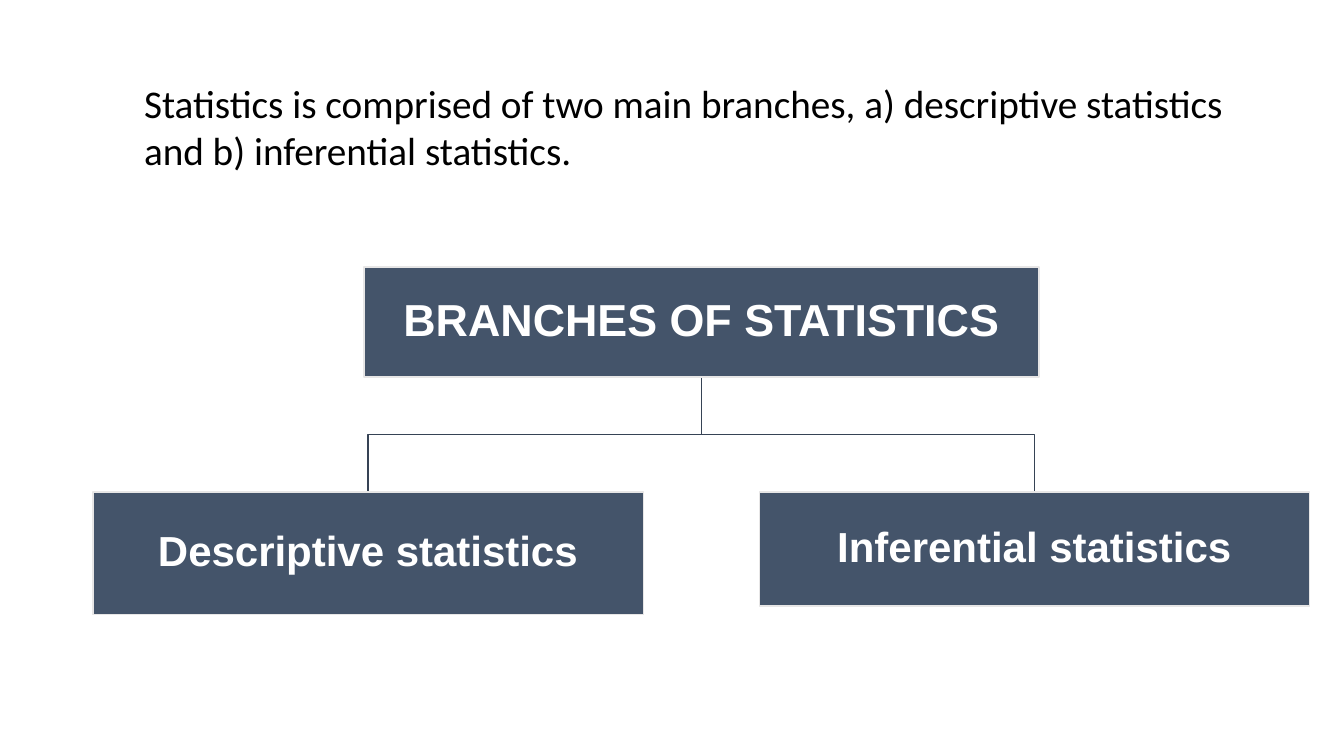
"""Builds a slide with a tree of the two branches of statistics."""
from dataclasses import dataclass

from pptx import Presentation
from pptx.dml.color import RGBColor
from pptx.enum.shapes import MSO_SHAPE
from pptx.enum.text import MSO_ANCHOR, MSO_AUTO_SIZE, PP_ALIGN
from pptx.util import Pt


@dataclass(frozen=True)
class Theme:
    ink: RGBColor = RGBColor(0x00, 0x00, 0x00)
    node_fill: RGBColor = RGBColor(0x44, 0x54, 0x6A)
    node_edge: RGBColor = RGBColor(0xE7, 0xE6, 0xE6)
    node_text: RGBColor = RGBColor(0xFF, 0xFF, 0xFF)
    link: RGBColor = RGBColor(0x36, 0x43, 0x55)
    text_font: str = "Calibri"
    node_font: str = "Arial"
    text_size: int = 28
    root_size: int = 32
    branch_size: int = 30
    line_width: int = 1
    node_inset: float = 1.5


class SlideBuilder:
    def __init__(self, page, theme):
        self.page = page
        self.theme = theme

    def span(self, para, text, font, size, color, bold=False):
        span = para.add_run()
        span.text = text
        span.font.name = font
        span.font.size = Pt(size)
        span.font.color.rgb = color
        span.font.bold = bold

    def text(self, left, top, width, height, text):
        box = self.page.shapes.add_textbox(Pt(left), Pt(top), Pt(width), Pt(height))
        frame = box.text_frame
        frame.word_wrap = True
        frame.auto_size = MSO_AUTO_SIZE.SHAPE_TO_FIT_TEXT
        self.span(frame.paragraphs[0], text, self.theme.text_font,
                  self.theme.text_size, self.theme.ink)

    def node(self, left, top, width, height, text, size):
        theme = self.theme
        box = self.page.shapes.add_shape(
            MSO_SHAPE.RECTANGLE, Pt(left), Pt(top), Pt(width), Pt(height))
        box.shadow.inherit = False
        box.fill.solid()
        box.fill.fore_color.rgb = theme.node_fill
        box.line.color.rgb = theme.node_edge
        box.line.width = Pt(theme.line_width)
        frame = box.text_frame
        frame.word_wrap = True
        frame.vertical_anchor = MSO_ANCHOR.MIDDLE
        frame.margin_left = frame.margin_right = Pt(theme.node_inset)
        frame.margin_top = frame.margin_bottom = Pt(theme.node_inset)
        para = frame.paragraphs[0]
        para.alignment = PP_ALIGN.CENTER
        para.line_spacing = 0.9
        self.span(para, text, theme.node_font, size, theme.node_text, bold=True)

    def link(self, start_x, start_y, end_x, end_y):
        middle_y = (start_y + end_y) / 2
        corners = [(start_x, middle_y), (end_x, middle_y), (end_x, end_y)]
        builder = self.page.shapes.build_freeform(Pt(start_x), Pt(start_y))
        builder.add_line_segments([(Pt(x), Pt(y)) for x, y in corners], close=False)
        elbow = builder.convert_to_shape()
        elbow.shadow.inherit = False
        elbow.fill.background()
        elbow.line.color.rgb = self.theme.link
        elbow.line.width = Pt(self.theme.line_width)


def main():
    deck = Presentation()
    deck.slide_width, deck.slide_height = Pt(960), Pt(540)
    theme = Theme()
    slide = SlideBuilder(deck.slides.add_slide(deck.slide_layouts[6]), theme)

    root_left, root_top, root_width, root_height = 259.9, 190.8, 482.4, 78.5
    root_center, root_bottom = root_left + root_width / 2, root_top + root_height
    branch_top, branch_width = 351.5, 393.2
    branches = [
        ("Descriptive statistics", 66.3, 87.6),
        ("Inferential statistics", 542.3, 81.4),
    ]

    for _, left, _ in reversed(branches):
        slide.link(root_center, root_bottom, left + branch_width / 2, branch_top)
    slide.node(root_left, root_top, root_width, root_height,
               "BRANCHES OF STATISTICS", theme.root_size)
    for label, left, height in branches:
        slide.node(left, branch_top, branch_width, height, label, theme.branch_size)
    slide.text(95.8, 53.3, 810.7, 75,
               "Statistics is comprised of two main branches, "
               "a) descriptive statistics and b) inferential statistics.")
    deck.save("out.pptx")


if __name__ == "__main__":
    main()
